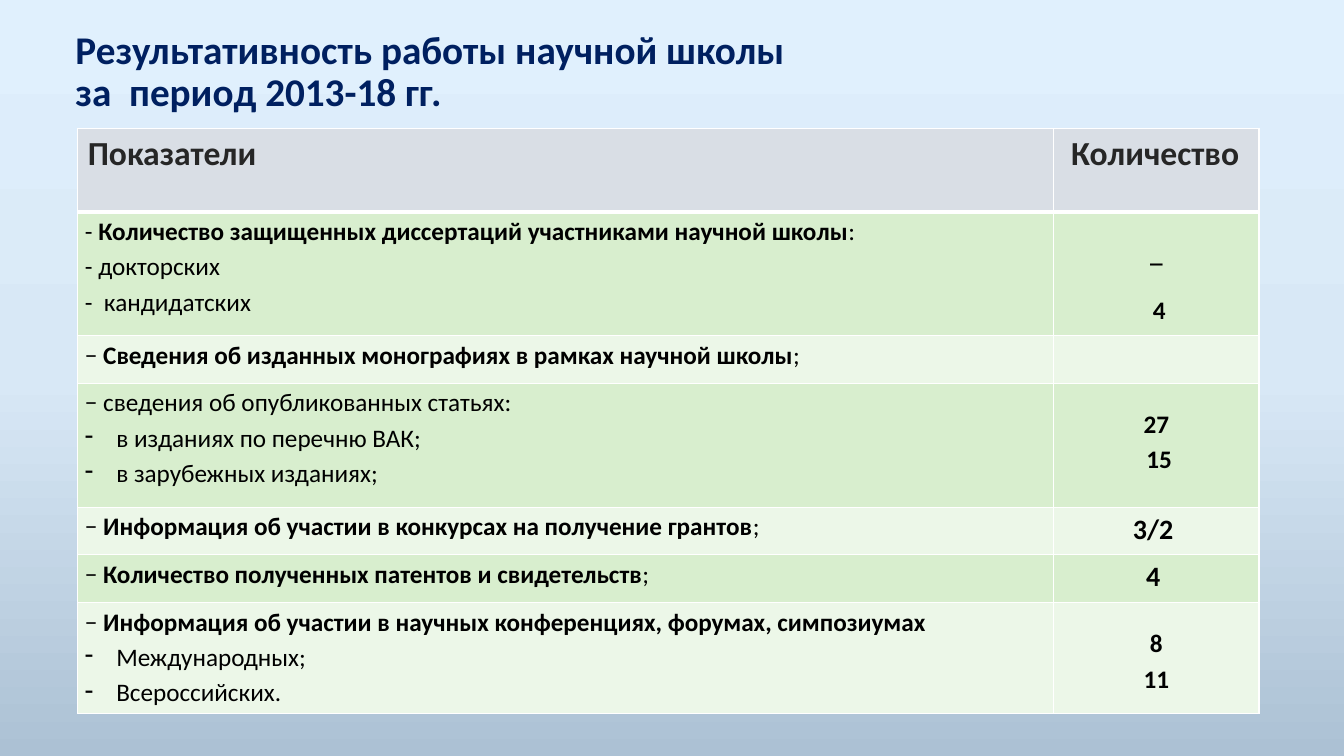
import copy
from dataclasses import dataclass

import pptx
import pptx.dml.color
import pptx.enum.text
import pptx.oxml
import pptx.oxml.ns
import pptx.util
from pptx.util import Cm, Pt

COLORS = {
    "title": "002060",
    "header_text": "262626",
    "text": "000000",
    "border": "FFFFFF",
    "header": "D9DEE5",
    "dark_row": "D8EECE",
    "light_row": "ECF7E8",
}
BACKGROUND = [(0, "E0F0FD"), (0.5, "D8E8F6"), (1, "ACC1D4")]
FONT = "Calibri"
CENTER = pptx.enum.text.PP_ALIGN.CENTER
VALUE_GAP = 15.5


@dataclass
class Line:
    """One paragraph: plain lead, bold body, plain tail; gap is in points."""
    lead: str = ""
    body: str = ""
    tail: str = ""
    bullet: bool = False
    size: int = 18
    gap: float = 0


HEADERS = ["Показатели", " Количество"]
# Row height in cm, indicator lines, value lines
ROWS = [
    (3.12,
     [Line("- ", "Количество защищенных диссертаций участниками научной школы", ":"),
      Line("- докторских"), Line("-  кандидатских")],
     [Line(body="_", gap=VALUE_GAP), Line(body=" 4", gap=VALUE_GAP)]),
    (1.2,
     [Line("− ", "Сведения об изданных монографиях в рамках научной школы", ";")],
     []),
    (3.12,
     [Line("− сведения об опубликованных статьях:"),
      Line("в изданиях по перечню ВАК;", bullet=True),
      Line("в зарубежных изданиях;", bullet=True)],
     [Line(body="27", gap=VALUE_GAP), Line(body=" 15")]),
    (1.2,
     [Line("− ", "Информация об участии в конкурсах на получение грантов", ";")],
     [Line(body="3/2 ", size=20)]),
    (1.2,
     [Line("− ", "Количество полученных патентов и свидетельств", ";")],
     [Line(body="4 ", size=20)]),
    (2.8,
     [Line("− ", "Информация об участии в научных конференциях, форумах, симпозиумах"),
      Line("Международных;", bullet=True), Line("Всероссийских.", bullet=True)],
     [Line(body="8", gap=VALUE_GAP), Line(body="11")]),
]


def rgb(name):
    return pptx.dml.color.RGBColor.from_string(COLORS.get(name, name))


def add_run(paragraph, text, size, color, bold):
    run = paragraph.add_run()
    run.text = text
    run.font.name = FONT
    run.font.size = Pt(size)
    run.font.bold = bold
    run.font.color.rgb = rgb(color)


def paint_background(slide):
    fill = slide.background.fill
    fill.gradient()
    fill.gradient_angle = 270
    stop_list = slide.element.xpath(".//a:gsLst")[0]
    stop_list.append(copy.deepcopy(stop_list[-1]))
    for stop, (position, color) in zip(fill.gradient_stops, BACKGROUND):
        stop.position = position
        stop.color.rgb = rgb(color)


def add_title(slide, left, top, width, height):
    frame = slide.shapes.add_textbox(left, top, width, height).text_frame
    frame.word_wrap = True
    frame.vertical_anchor = pptx.enum.text.MSO_ANCHOR.MIDDLE
    paragraph = frame.paragraphs[0]
    paragraph.line_spacing = 0.9
    add_run(paragraph, "Результативность работы научной школы", 28, "title", True)
    paragraph.add_line_break()
    add_run(paragraph, "за  период 2013-18 гг.", 28, "title", True)


def style_cell(cell, fill, top=1, bottom=1):
    """Borders come before the fill, as the schema asks; widths in points."""
    properties = cell._tc.get_or_add_tcPr()
    for side, width in (("L", 1), ("R", 1), ("T", top), ("B", bottom)):
        properties.append(pptx.oxml.parse_xml(
            f'<a:ln{side} {pptx.oxml.ns.nsdecls("a")} w="{Pt(width)}">'
            f'<a:solidFill><a:srgbClr val="{COLORS["border"]}"/></a:solidFill>'
            f'</a:ln{side}>'))
    cell.fill.solid()
    cell.fill.fore_color.rgb = rgb(fill)


def add_dash_bullet(paragraph):
    properties = paragraph._p.get_or_add_pPr()
    properties.set("marL", str(Cm(0.79)))
    properties.set("indent", str(-Cm(0.79)))
    properties.append(pptx.oxml.parse_xml(
        f'<a:buChar {pptx.oxml.ns.nsdecls("a")} char="-"/>'))


def fill_cell(cell, lines, alignment=None):
    """The gap of the first line becomes the top margin of the cell."""
    if not lines:
        return
    cell.margin_left = cell.margin_right = Cm(0.18)
    cell.margin_top = Pt(lines[0].gap)
    cell.margin_bottom = 0
    frame = cell.text_frame
    for index, line in enumerate(lines):
        paragraph = frame.add_paragraph() if index else frame.paragraphs[0]
        paragraph.alignment = alignment
        paragraph.line_spacing = 1.15
        if index and line.gap:
            paragraph.space_before = Pt(line.gap)
        if line.bullet:
            add_dash_bullet(paragraph)
        for text, bold in ((line.lead, False), (line.body, True), (line.tail, False)):
            if text:
                add_run(paragraph, text, line.size, "text", bold)


def add_results_table(slide, left, top, width, height):
    table = slide.shapes.add_table(
        len(ROWS) + 1, len(HEADERS), left, top, width, height).table
    value_width = Cm(5.18)
    table.columns[0].width = width - value_width
    table.columns[1].width = value_width
    table.rows[0].height = height - sum(Cm(row[0]) for row in ROWS)
    for column, text in enumerate(HEADERS):
        cell = table.cell(0, column)
        style_cell(cell, "header", bottom=3)
        add_run(cell.text_frame.paragraphs[0], text, 24, "header_text", True)
    for index, (row_height, indicators, values) in enumerate(ROWS, start=1):
        table.rows[index].height = Cm(row_height)
        for cell in table.rows[index].cells:
            style_cell(cell, "dark_row" if index % 2 else "light_row",
                       top=3 if index == 1 else 1)
        fill_cell(table.cell(index, 0), indicators)
        fill_cell(table.cell(index, 1), values, CENTER)


def main():
    presentation = pptx.Presentation()
    presentation.slide_width = Cm(33.87)
    presentation.slide_height = Cm(19.05)
    slide = presentation.slides.add_slide(presentation.slide_layouts[6])
    paint_background(slide)
    add_title(slide, Cm(1.65), Cm(0), Cm(29.21), Cm(3.68))
    add_results_table(slide, Cm(1.96), Cm(3.23), Cm(29.77), Cm(14.75))
    presentation.save("out.pptx")


if __name__ == "__main__":
    main()
